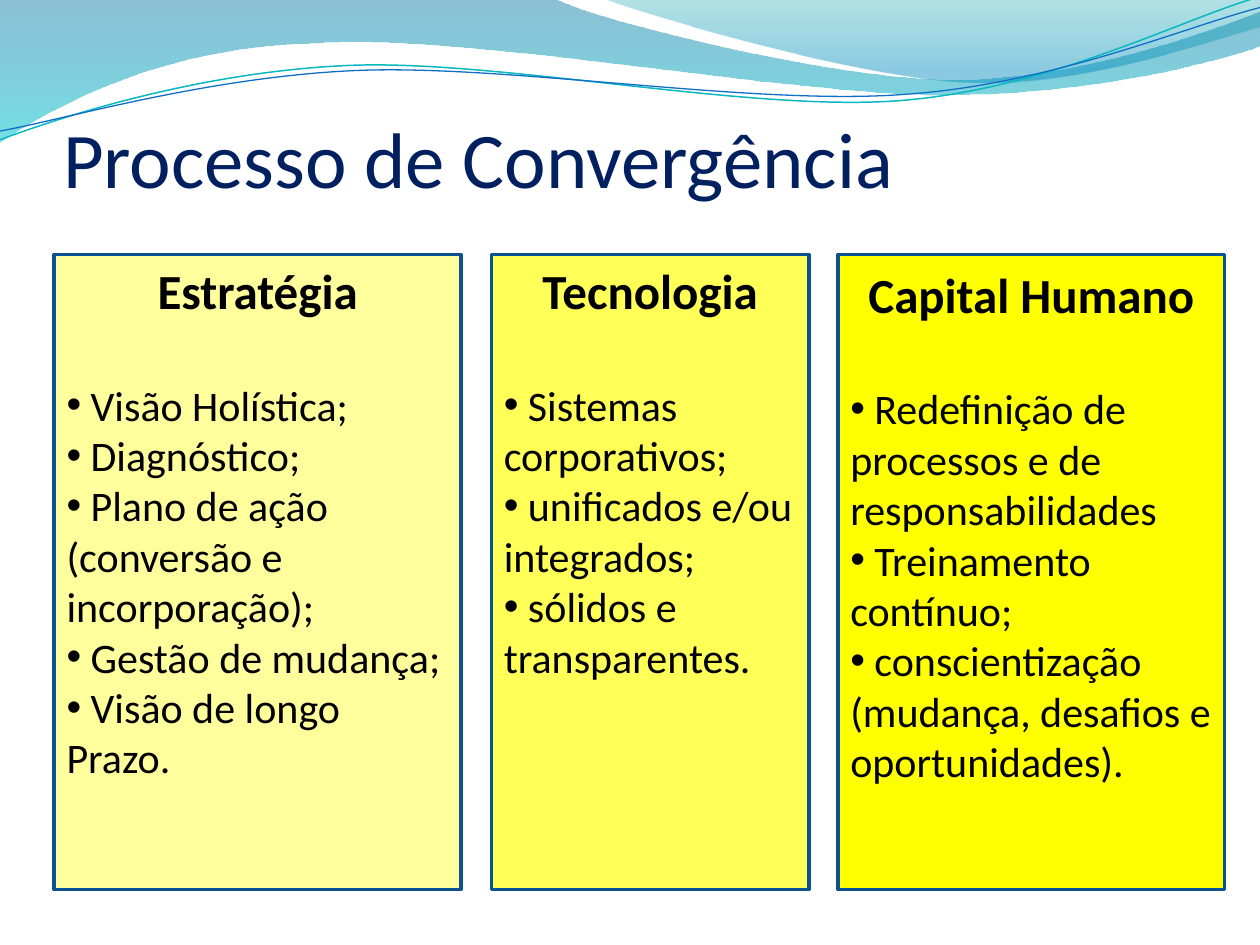
from dataclasses import dataclass

import lxml.etree
import pptx
import pptx.dml.color
import pptx.enum.shapes
import pptx.enum.text
import pptx.oxml.ns
import pptx.util
from pptx.util import Inches

FONT = "Calibri"
COLORS = {
    "title": "002060",
    "text": "000000",
    "border": "0B5292",
    "strategy": "FFFE9C",
    "technology": "FFFF57",
    "people": "FFFF00",
    "blue": "0074A1",
    "cyan": "00C6CF",
    "teal": "00A1A9",
    "sky": "008BBF",
    "upper_line": "0AB8BF",
    "lower_line": "0F6FC6",
}
COLUMN_TOP, COLUMN_HEIGHT = 2.02, 5.04

Point = tuple[float, float]


@dataclass
class Stop:
    position: float
    color: str
    opacity: int


@dataclass
class Wave:
    start: Point
    segments: list[tuple[Point, ...]]
    stops: tuple[Stop, ...] = ()
    line_color: str = ""
    line_width: float = 0


@dataclass
class Item:
    text: str
    bulleted: bool = True


@dataclass
class Column:
    left: float
    width: float
    fill: str
    heading: str
    items: list[Item]
    top_inset: float = 0.05


WAVES = [
    Wave(
        (0, 0),
        [
            ((4.4, -0.01),),
            ((4.76, 0.17), (6.64, 0.63), (7.58, 0.63)),
            ((8.53, 0.63), (9.58, 0.26), (10, 0.09)),
            ((10.01, 0.36),),
            ((9.83, 0.44), (8.7, 0.76), (7.46, 0.75)),
            ((6.22, 0.75), (3.82, 0.28), (2.57, 0.34)),
            ((1.29, 0.36), (0.46, 0.83), (-0.01, 1.13)),
        ],
        stops=(Stop(0, "blue", 45), Stop(1, "cyan", 55)),
    ),
    Wave(
        (4.79, -0.01),
        [
            ((5.09, 0.11), (6.82, 0.62), (7.69, 0.65)),
            ((8.56, 0.69), (9.61, 0.32), (10, 0.21)),
            ((10, 0),),
        ],
        stops=(Stop(0, "teal", 30), Stop(0.8, "sky", 45)),
    ),
    Wave(
        (0, 1.11),
        [
            ((0.48, 0.93), (1.58, 0.57), (2.77, 0.52)),
            ((3.95, 0.47), (5.93, 0.89), (7.13, 0.8)),
            ((8.33, 0.71), (9.38, 0.15), (9.98, -0.02)),
        ],
        line_color="upper_line",
        line_width=0.85,
    ),
    Wave(
        (0, 1.04),
        [
            ((0.47, 0.96), (1.64, 0.61), (2.83, 0.56)),
            ((4.03, 0.51), (5.97, 0.84), (7.17, 0.75)),
            ((8.36, 0.67), (9.41, 0.21), (10, 0.06)),
        ],
        line_color="lower_line",
        line_width=0.75,
    ),
]

COLUMNS = [
    Column(3.9, 2.52, "technology", "Tecnologia", [
        Item("Sistemas corporativos;"),
        Item("unificados e/ou integrados;"),
        Item("sólidos e transparentes."),
    ]),
    Column(6.65, 3.07, "people", "Capital Humano", [
        Item("Redefinição de processos e de responsabilidades"),
        Item("Treinamento contínuo;"),
        Item("conscientização"),
        Item("(mudança, desafios e oportunidades).", bulleted=False),
    ], top_inset=0.08),
    Column(0.43, 3.23, "strategy", "Estratégia", [
        Item("Visão Holística;"),
        Item("Diagnóstico;"),
        Item("Plano de ação (conversão e incorporação);"),
        Item("Gestão de mudança;"),
        Item("Visão de longo Prazo."),
    ]),
]


def rgb(name: str) -> pptx.dml.color.RGBColor:
    return pptx.dml.color.RGBColor.from_string(COLORS[name])


def add_run(para, text: str, size: float, color: str, bold: bool = False) -> None:
    span = para.add_run()
    span.text = text
    span.font.name = FONT
    span.font.size = pptx.util.Pt(size)
    span.font.bold = bold
    span.font.color.rgb = rgb(color)


def add_bullet(para) -> None:
    properties = para._p.get_or_add_pPr()
    properties.set("marL", "0")
    properties.set("indent", "0")
    font = lxml.etree.SubElement(properties, pptx.oxml.ns.qn("a:buFont"))
    font.set("typeface", "Arial")
    bullet = lxml.etree.SubElement(properties, pptx.oxml.ns.qn("a:buChar"))
    bullet.set("char", "•")


def bend_segments(shape, segments: list[tuple[Point, ...]]) -> None:
    lines = iter(list(shape.element.spPr.iter(pptx.oxml.ns.qn("a:lnTo"))))
    for segment in segments:
        group = [next(lines) for _ in segment]
        if len(group) == 1:
            continue
        curve = lxml.etree.Element(pptx.oxml.ns.qn("a:cubicBezTo"))
        group[0].addprevious(curve)
        for line in group:
            curve.append(line[0])
            line.getparent().remove(line)


def draw_wave(page, wave: Wave) -> None:
    vertices = [wave.start] + [point for segment in wave.segments for point in segment]
    start, *rest = [(Inches(x), Inches(y)) for x, y in vertices]
    builder = page.shapes.build_freeform(*start)
    builder.add_line_segments(rest, close=bool(wave.stops))
    shape = builder.convert_to_shape()
    bend_segments(shape, wave.segments)
    shape.shadow.inherit = False
    if not wave.stops:
        shape.fill.background()
        shape.line.color.rgb = rgb(wave.line_color)
        shape.line.width = pptx.util.Pt(wave.line_width)
        return
    shape.line.fill.background()
    shape.fill.gradient()
    shape.fill.gradient_angle = 270
    for target, stop in zip(shape.fill.gradient_stops, wave.stops):
        target.position = stop.position
        target.color.rgb = rgb(stop.color)
    colors = shape.element.spPr.iter(pptx.oxml.ns.qn("a:srgbClr"))
    for color, stop in zip(list(colors), wave.stops):
        alpha = lxml.etree.SubElement(color, pptx.oxml.ns.qn("a:alpha"))
        alpha.set("val", str(stop.opacity * 1000))


def draw_title(page, text: str) -> None:
    title = page.shapes.title
    title.left, title.top = Inches(0.5), Inches(0.77)
    title.width, title.height = Inches(9), Inches(0.85)
    frame = title.text_frame
    frame.auto_size = pptx.enum.text.MSO_AUTO_SIZE.NONE
    frame.vertical_anchor = pptx.enum.text.MSO_ANCHOR.BOTTOM
    frame.margin_left = frame.margin_right = frame.margin_bottom = 0
    frame.margin_top = Inches(0.05)
    para = frame.paragraphs[0]
    para.alignment = pptx.enum.text.PP_ALIGN.LEFT
    add_run(para, text, 45, "title")
    title.element.getparent().append(title.element)


def draw_column(page, column: Column) -> None:
    box = page.shapes.add_shape(
        pptx.enum.shapes.MSO_SHAPE.RECTANGLE,
        Inches(column.left), Inches(COLUMN_TOP), Inches(column.width), Inches(COLUMN_HEIGHT),
    )
    box.shadow.inherit = False
    box.fill.solid()
    box.fill.fore_color.rgb = rgb(column.fill)
    box.line.color.rgb = rgb("border")
    box.line.width = pptx.util.Pt(2)
    frame = box.text_frame
    frame.word_wrap = True
    frame.vertical_anchor = pptx.enum.text.MSO_ANCHOR.TOP
    frame.margin_top = Inches(column.top_inset)
    heading = frame.paragraphs[0]
    heading.alignment = pptx.enum.text.PP_ALIGN.CENTER
    heading.space_after = pptx.util.Pt(34)
    add_run(heading, column.heading, 28, "text", bold=True)
    for item in column.items:
        para = frame.add_paragraph()
        para.alignment = pptx.enum.text.PP_ALIGN.LEFT
        if item.bulleted:
            add_bullet(para)
        add_run(para, f" {item.text}" if item.bulleted else item.text, 24, "text")


def main() -> None:
    deck = pptx.Presentation()
    deck.slide_width, deck.slide_height = Inches(10), Inches(7.5)
    page = deck.slides.add_slide(deck.slide_layouts[5])
    for wave in WAVES:
        draw_wave(page, wave)
    draw_title(page, "Processo de Convergência")
    for column in COLUMNS:
        draw_column(page, column)
    deck.save("out.pptx")


if __name__ == "__main__":
    main()
